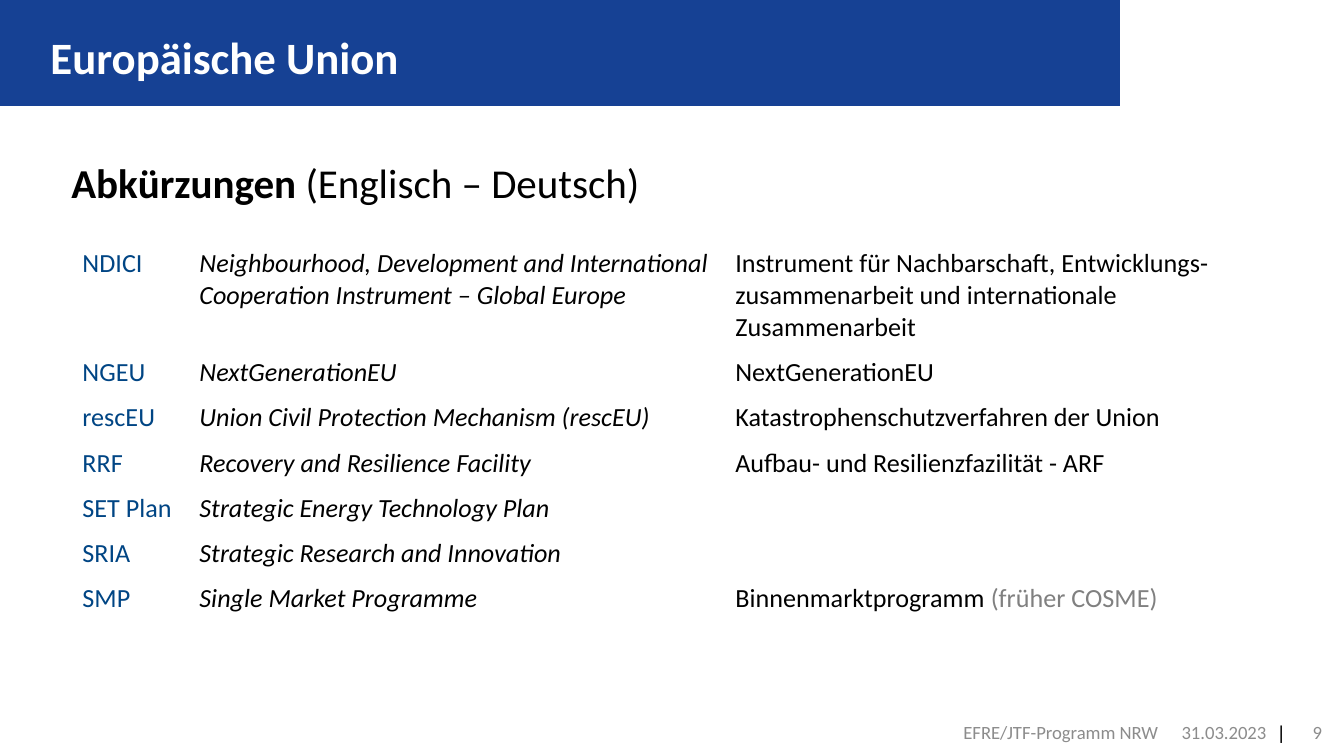
from lxml import etree
from pptx import Presentation
from pptx.dml.color import RGBColor
from pptx.enum import shapes, text
from pptx.oxml.ns import qn
from pptx.util import Pt

PX = 914400 / 134.4
BAND, TERM, BLACK, WHITE = "164194", "004584", "000000", "FFFFFF"
GREY, FOOTER_GREY = "808080", "8C8C8C"
COLUMN_WIDTHS = [117, 536, 586]
FIRST_ROW, OTHER_ROW = 86, 36
TABLE_SIZE = 14

# Abbreviation, English name, German name, German remark
ABBREVIATIONS = [
    ("NDICI",
     "Neighbourhood, Development and International Cooperation Instrument – Global Europe",
     "Instrument für Nachbarschaft, Entwicklungs-zusammenarbeit und internationale Zusammenarbeit", ""),
    ("NGEU", "NextGenerationEU", "NextGenerationEU", ""),
    ("rescEU", "Union Civil Protection Mechanism (rescEU)",
     "Katastrophenschutzverfahren der Union", ""),
    ("RRF", "Recovery and Resilience Facility", "Aufbau- und Resilienzfazilität - ARF", ""),
    ("SET Plan", "Strategic Energy Technology Plan", "", ""),
    ("SRIA", "Strategic Research and Innovation", "", ""),
    ("SMP", "Single Market Programme", "Binnenmarktprogramm ", "(früher COSME)"),
    ("", "", "", ""),
]


def px(length):
    return round(length * PX)


def color(hex_string):
    return RGBColor.from_string(hex_string)


def place(shape, left, top, width, height):
    shape.left, shape.top = px(left), px(top)
    shape.width, shape.height = px(width), px(height)


def add_run(paragraph, words, size, hex_string, bold=False, italic=False, face="Calibri"):
    run = paragraph.add_run()
    run.text = words
    font = run.font
    font.name, font.size = face, Pt(size)
    font.bold, font.italic = bold, italic
    font.color.rgb = color(hex_string)


def add_band(slide):
    band = slide.shapes.add_shape(shapes.MSO_SHAPE.RECTANGLE, 0, 0, px(1120), px(106))
    band.shadow.inherit = False
    band.fill.solid()
    band.fill.fore_color.rgb = color(BAND)
    band.line.fill.background()
    slide.shapes._spTree.insert(2, band._element)


def fill_placeholder(placeholder, box, runs, size, hex_string):
    """Set (words, bold) runs as one plain, left-aligned line without a bullet."""
    place(placeholder, *box)
    frame = placeholder.text_frame
    frame.auto_size = text.MSO_AUTO_SIZE.NONE
    frame.vertical_anchor = text.MSO_ANCHOR.MIDDLE
    paragraph = frame.paragraphs[0]
    paragraph.alignment = text.PP_ALIGN.LEFT
    paragraph.space_before = Pt(0)
    properties = paragraph._p.get_or_add_pPr()
    properties.set("marL", "0")
    properties.set("indent", "0")
    etree.SubElement(properties, qn("a:buNone"))
    for words, bold in runs:
        add_run(paragraph, words, size, hex_string, bold)


def fill_cell(cell, runs):
    """Write (words, colour, italic) runs into a white cell."""
    cell.fill.solid()
    cell.fill.fore_color.rgb = color(WHITE)
    paragraph = cell.text_frame.paragraphs[0]
    for words, hex_string, italic in runs:
        if words:
            add_run(paragraph, words, TABLE_SIZE, hex_string, italic=italic)
    if not paragraph.runs:
        # An empty cell would otherwise be as tall as 18 pt text
        etree.SubElement(paragraph._p, qn("a:endParaRPr"), sz=str(TABLE_SIZE * 100))


def add_abbreviations(slide):
    height = FIRST_ROW + OTHER_ROW * (len(ABBREVIATIONS) - 1)
    table = slide.shapes.add_table(
        len(ABBREVIATIONS), len(COLUMN_WIDTHS),
        px(69), px(241), px(sum(COLUMN_WIDTHS)), px(height)).table
    table.first_row = table.horz_banding = False
    for column, width in zip(table.columns, COLUMN_WIDTHS):
        column.width = px(width)
    for index, (row, entry) in enumerate(zip(table.rows, ABBREVIATIONS)):
        row.height = px(OTHER_ROW if index else FIRST_ROW)
        term, english, german, remark = entry
        contents = [
            [(term, TERM, False)],
            [(english, BLACK, True)],
            [(german, BLACK, False), (remark, GREY, False)],
        ]
        for cell, runs in zip(row.cells, contents):
            fill_cell(cell, runs)


def add_footer_text(slide, words, box, align, side_insets=(5, 5), hex_string=FOOTER_GREY,
                    face="Calibri", anchor=text.MSO_ANCHOR.MIDDLE, wrap=True):
    footer = slide.shapes.add_textbox(0, 0, 0, 0)
    place(footer, *box)
    frame = footer.text_frame
    frame.word_wrap = wrap
    frame.vertical_anchor = anchor
    frame.margin_left, frame.margin_right = (px(inset) for inset in side_insets)
    frame.margin_top, frame.margin_bottom = px(5), px(11)
    paragraph = frame.paragraphs[0]
    paragraph.alignment = align
    add_run(paragraph, words, 10, hex_string, face=face)


def main():
    presentation = Presentation()
    presentation.slide_width, presentation.slide_height = px(1344), px(756)
    slide = presentation.slides.add_slide(presentation.slide_layouts[1])

    add_band(slide)
    title, heading = slide.placeholders
    fill_placeholder(title, (37, 19, 1005, 75), [("Europäische Union", True)], 24, WHITE)
    fill_placeholder(heading, (58, 124, 1227, 117),
                     [("Abkürzungen ", True), ("(Englisch – Deutsch)", False)], 22, BLACK)
    add_abbreviations(slide)

    align = text.PP_ALIGN
    add_footer_text(slide, "|", (1274, 716, 16, 39), align.LEFT, hex_string=BLACK,
                    face="Arial", anchor=text.MSO_ANCHOR.TOP, wrap=False)
    add_footer_text(slide, "31.03.2023", (1173, 715, 102, 40), align.CENTER)
    add_footer_text(slide, "EFRE/JTF-Programm NRW", (546, 715, 625, 40), align.RIGHT, (13, 13))
    add_footer_text(slide, "9", (1286, 715, 52, 40), align.RIGHT, (0, 16))

    presentation.save("out.pptx")


if __name__ == "__main__":
    main()
